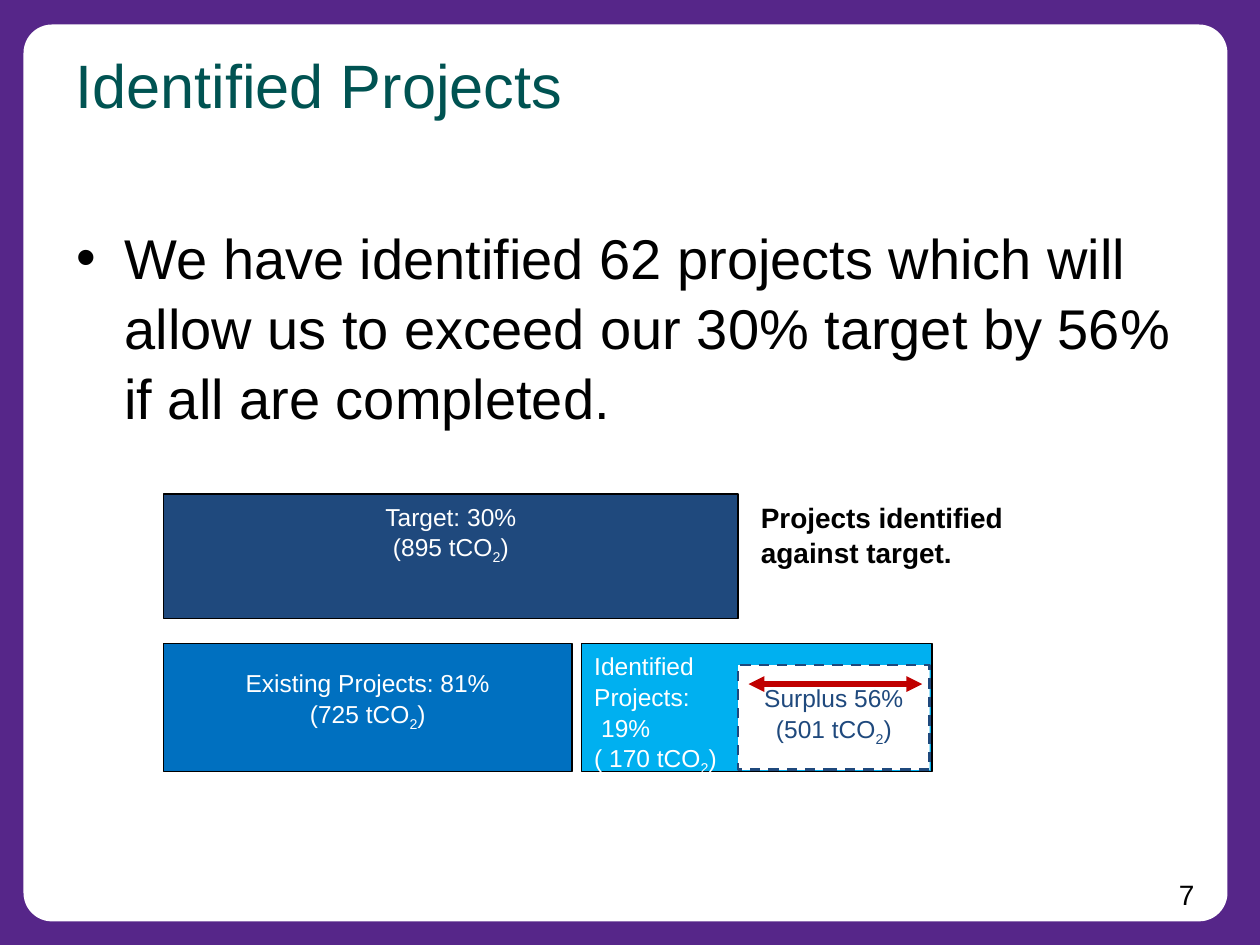
from lxml.etree import SubElement
from pptx import Presentation
from pptx.dml.color import RGBColor
from pptx.enum.dml import MSO_LINE_DASH_STYLE as Dash
from pptx.enum.shapes import MSO_CONNECTOR as Connector, MSO_SHAPE as Shape
from pptx.enum.text import MSO_ANCHOR as Anchor, PP_ALIGN as Align
from pptx.oxml.ns import qn
from pptx.util import Cm, Pt

COLORS = {
    "purple": "562689", "white": "FFFFFF", "black": "000000", "green": "005352",
    "navy": "1F497D", "blue": "0070C0", "sky": "00B0F0", "red": "C00000",
}
FONT = "Arial"
INSETS = (0.25, 0.13, 0.25, 0.13)  # left, top, right, bottom in cm

# Boxes are left, top, width, height in cm
PANEL = (0.51, 0.53, 24.2, 18.01)
TEXTS = [
    {"box": (1.27, 0.76, 17.27, 2.57), "lines": ["Identified Projects"],
     "size": 35, "color": "green"},
    {"box": (1.3, 4.32, 22.81, 13.2), "size": 32, "bullet": True,
     "lines": ["We have identified 62 projects which will allow us to exceed "
               "our 30% target by 56% if all are completed."]},
    {"box": (18.54, 17.53, 5.79, 0.94), "lines": ["7"], "size": 16, "align": Align.RIGHT},
]

LEFT, TOP, BOTTOM = 3.3, 9.96, 12.98
TARGET_END = LEFT + 11.58
BARS = [
    {"box": (15.09, 9.93, 7.42, 3.05), "fill": "white", "line": "white",
     "lines": ["Projects identified against target."], "size": 16, "bold": True,
     "color": "black", "align": Align.LEFT},
    {"box": (LEFT, TOP, TARGET_END - LEFT, 2.51), "fill": "navy",
     "lines": ["Target: 30%", "(895 tCO~2~)"]},
    {"box": (LEFT, BOTTOM, 8.23, 2.57), "fill": "blue",
     "lines": ["Existing Projects: 81%", "(725 tCO~2~)"],
     "insets": (0.25, 0.46, 0.25, 0.13)},
    {"box": (11.73, BOTTOM, 7.06, 2.57), "fill": "sky", "align": Align.LEFT,
     "lines": ["Identified", "Projects:", "19%", "( 170 tCO~2~)"], "indents": {2: 0.14}},
    {"box": (TARGET_END, 13.41, 3.86, 2.11), "fill": "white", "line": "navy",
     "width": 1.5, "dash": Dash.DASH, "color": "navy",
     "lines": ["Surplus 56%", "(501 tCO~2~)"], "insets": (0.05, 0.34, 0.05, 0.03)},
]
ARROW = (15.09, 18.59, 13.79)  # start x, end x, y


def rgb(name):
    return RGBColor.from_string(COLORS[name])


def style_line(line, color, width):
    line.color.rgb = rgb(color)
    line.width = Pt(width)


def add_box(shapes, kind, box, fill, line, width):
    sp = shapes.add_shape(kind, *map(Cm, box))
    sp.shadow.inherit = False
    sp.fill.solid()
    sp.fill.fore_color.rgb = rgb(fill)
    style_line(sp.line, line, width)
    return sp


def add_bullet(p):
    pPr = p._p.get_or_add_pPr()
    pPr.set("marL", str(Cm(0.96)))
    pPr.set("indent", str(Cm(-0.96)))
    SubElement(pPr, qn("a:buFont")).set("typeface", FONT)
    SubElement(pPr, qn("a:buChar")).set("char", "•")


def write(tf, item, color, align):
    """Fill a text frame; text between tildes becomes a subscript."""
    tf.word_wrap = True
    tf.vertical_anchor = Anchor.TOP
    for side, inset in zip(("left", "top", "right", "bottom"), item.get("insets", INSETS)):
        setattr(tf, f"margin_{side}", Cm(inset))
    font = {"name": FONT, "size": Pt(item.get("size", 14)), "bold": item.get("bold", False)}
    for i, text in enumerate(item["lines"]):
        p = tf.add_paragraph() if i else tf.paragraphs[0]
        p.alignment = item.get("align", align)
        p.line_spacing = 1.04
        if item.get("bullet"):
            add_bullet(p)
        if i in item.get("indents", {}):
            p._p.get_or_add_pPr().set("marL", str(Cm(item["indents"][i])))
        for j, part in enumerate(text.split("~")):
            r = p.add_run()
            r.text = part
            for name, value in font.items():
                setattr(r.font, name, value)
            r.font.color.rgb = rgb(item.get("color", color))
            if j % 2:
                r._r.get_or_add_rPr().set("baseline", "-25000")


def add_double_arrow(shapes, start, end, y):
    arrow = shapes.add_connector(Connector.STRAIGHT, Cm(start), Cm(y), Cm(end), Cm(y))
    style_line(arrow.line, "red", 3)
    ln = arrow.line._get_or_add_ln()
    for tag in ("a:headEnd", "a:tailEnd"):
        SubElement(ln, qn(tag)).set("type", "triangle")
    SubElement(arrow._element.spPr, qn("a:effectLst"))


def main():
    prs = Presentation()
    prs.slide_width, prs.slide_height = Cm(25.4), Cm(19.05)
    s = prs.slides.add_slide(prs.slide_layouts[6])
    s.background.fill.solid()
    s.background.fill.fore_color.rgb = rgb("purple")

    panel = add_box(s.shapes, Shape.ROUNDED_RECTANGLE, PANEL, "white", "white", 2)
    panel.adjustments[0] = 0.03
    for item in TEXTS:
        sp = s.shapes.add_textbox(*map(Cm, item["box"]))
        write(sp.text_frame, item, "black", Align.LEFT)

    diagram = s.shapes.add_group_shape().shapes
    for bar in BARS:
        sp = add_box(diagram, Shape.RECTANGLE, bar["box"], bar["fill"],
                     bar.get("line", "black"), bar.get("width", 0.75))
        if "dash" in bar:
            sp.line.dash_style = bar["dash"]
        write(sp.text_frame, bar, "white", Align.CENTER)
    add_double_arrow(diagram, *ARROW)

    prs.save("out.pptx")


if __name__ == "__main__":
    main()
